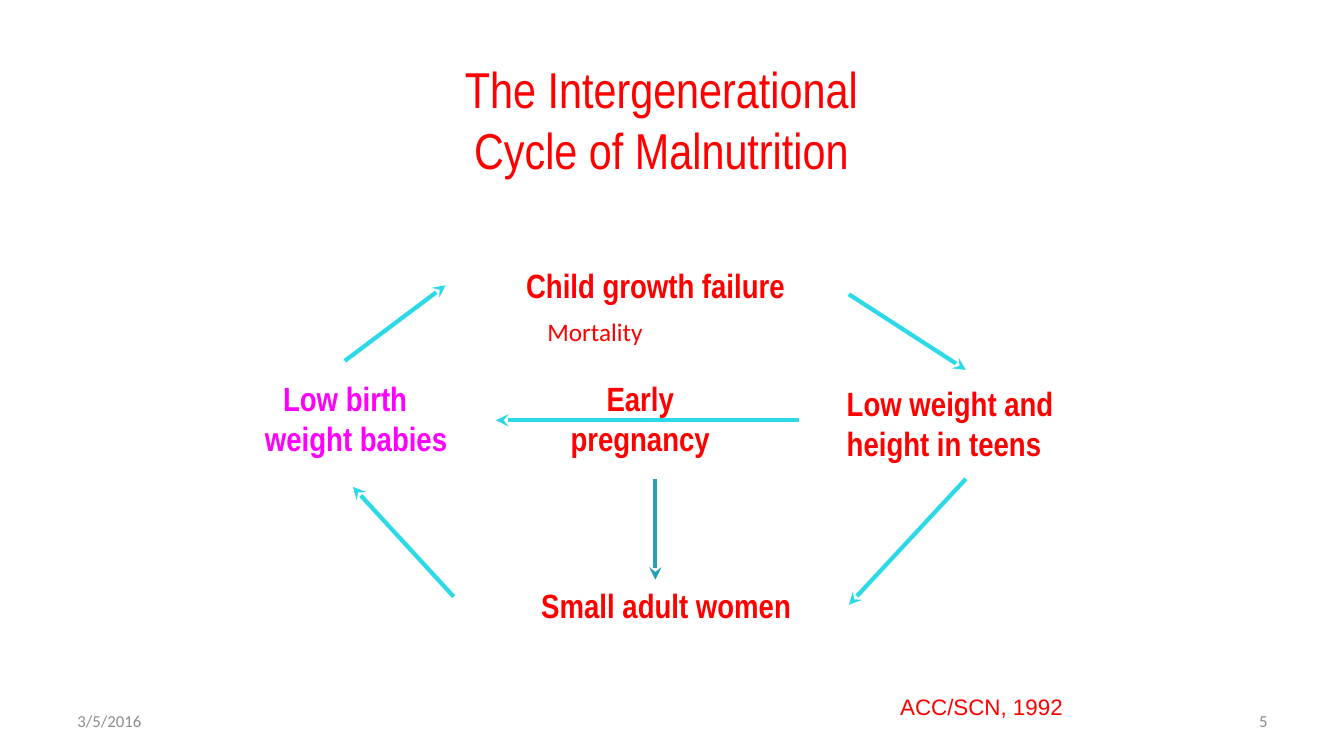
from lxml import etree
from pptx import Presentation
from pptx.dml.color import RGBColor
from pptx.enum.shapes import MSO_CONNECTOR
from pptx.enum.text import MSO_ANCHOR, PP_ALIGN
from pptx.oxml.ns import qn
from pptx.util import Pt

EMU_PER_PX = 9144  # 100 px to the inch
TITLE_ONLY = 5
LEFT, CENTER, RIGHT = PP_ALIGN.LEFT, PP_ALIGN.CENTER, PP_ALIGN.RIGHT
TOP, MIDDLE = MSO_ANCHOR.TOP, MSO_ANCHOR.MIDDLE
STRAIGHT = MSO_CONNECTOR.STRAIGHT

RED = RGBColor(0xFF, 0x00, 0x00)
MAGENTA = RGBColor(0xFF, 0x00, 0xFF)
CYAN = RGBColor(0x2C, 0xD9, 0xE6)
TEAL = RGBColor(0x23, 0x9F, 0xB8)
DATE_GRAY = RGBColor(0x8C, 0x8C, 0x8C)
NUMBER_GRAY = RGBColor(0x89, 0x89, 0x89)

# Start and end of each arrow in the cycle
CYCLE_ARROWS = [
    ((792, 417), (492, 417)),
    ((842, 292), (958, 367)),
    ((342, 358), (442, 283)),
    ((450, 592), (350, 483)),
    ((958, 475), (842, 600)),
]


def px(*lengths):
    return [length * EMU_PER_PX for length in lengths]


def write_text(frame, lines, font="Arial Narrow", size=24, color=RED, bold=False,
               align=LEFT, anchor=TOP, first_margin=0):
    """Fill the frame with one paragraph per line; first_margin shifts the first one."""
    frame.word_wrap = True
    frame.vertical_anchor = anchor
    for index, line in enumerate(lines):
        para = frame.paragraphs[0] if index == 0 else frame.add_paragraph()
        para.text = line
        para.alignment = align
        para.font.name = font
        para.font.size = Pt(size)
        para.font.bold = bold
        para.font.color.rgb = color
        for span in para.runs:
            span.font.name = font
            span.font.size = Pt(size)
            span.font.bold = bold
            span.font.color.rgb = color
    if first_margin:
        properties = frame.paragraphs[0]._p.get_or_add_pPr()
        properties.set("marL", str(first_margin * EMU_PER_PX))


def add_title(slide, left, top, width, height, text, **text_format):
    title = slide.shapes.title
    title.left, title.top, title.width, title.height = px(left, top, width, height)
    write_text(title.text_frame, [text], **text_format)


def add_label(slide, left, top, width, height, *lines, **text_format):
    box = slide.shapes.add_textbox(*px(left, top, width, height))
    write_text(box.text_frame, lines, **text_format)


def add_arrow(slide, start, end, color):
    arrow = slide.shapes.add_connector(STRAIGHT, *px(*start, *end))
    arrow.line.color.rgb = color
    arrow.line.width = Pt(3)
    etree.SubElement(arrow.line._get_or_add_ln(), qn("a:tailEnd"), type="stealth")
    etree.SubElement(arrow._element.spPr, qn("a:effectLst"))


def main():
    deck = Presentation()
    deck.slide_width, deck.slide_height = px(1333, 750)
    slide = deck.slides.add_slide(deck.slide_layouts[TITLE_ONLY])

    add_title(slide, 284, 52, 744, 132, "The Intergenerational\vCycle of Malnutrition",
              size=36, align=CENTER, anchor=MIDDLE)

    add_label(slide, 512, 258, 300, 51, "Child growth failure", bold=True)
    add_label(slide, 533, 309, 191, 40, "Mortality", font="Calibri", size=18)
    add_label(slide, 542, 370, 186, 91, "Early", "pregnancy", bold=True, align=CENTER)
    add_label(slide, 527, 575, 300, 51, "Small adult women", bold=True)
    add_label(slide, 253, 370, 240, 91, "Low birth", "weight babies",
              color=MAGENTA, bold=True, first_margin=18)
    add_label(slide, 830, 375, 300, 91, "Low weight and", "height in teens", bold=True)

    for start, end in CYCLE_ARROWS:
        add_arrow(slide, start, end, CYAN)
    add_arrow(slide, (650, 475), (650, 575), TEAL)

    add_label(slide, 883, 683, 233, 37, "ACC/SCN, 1992", font="Arial", size=16)
    add_label(slide, 67, 695, 311, 40, "3/5/2016", font="Calibri", size=12,
              color=DATE_GRAY, anchor=MIDDLE)
    add_label(slide, 956, 695, 311, 40, "5", font="Calibri", size=12,
              color=NUMBER_GRAY, align=RIGHT, anchor=MIDDLE)

    deck.save("out.pptx")


if __name__ == "__main__":
    main()
